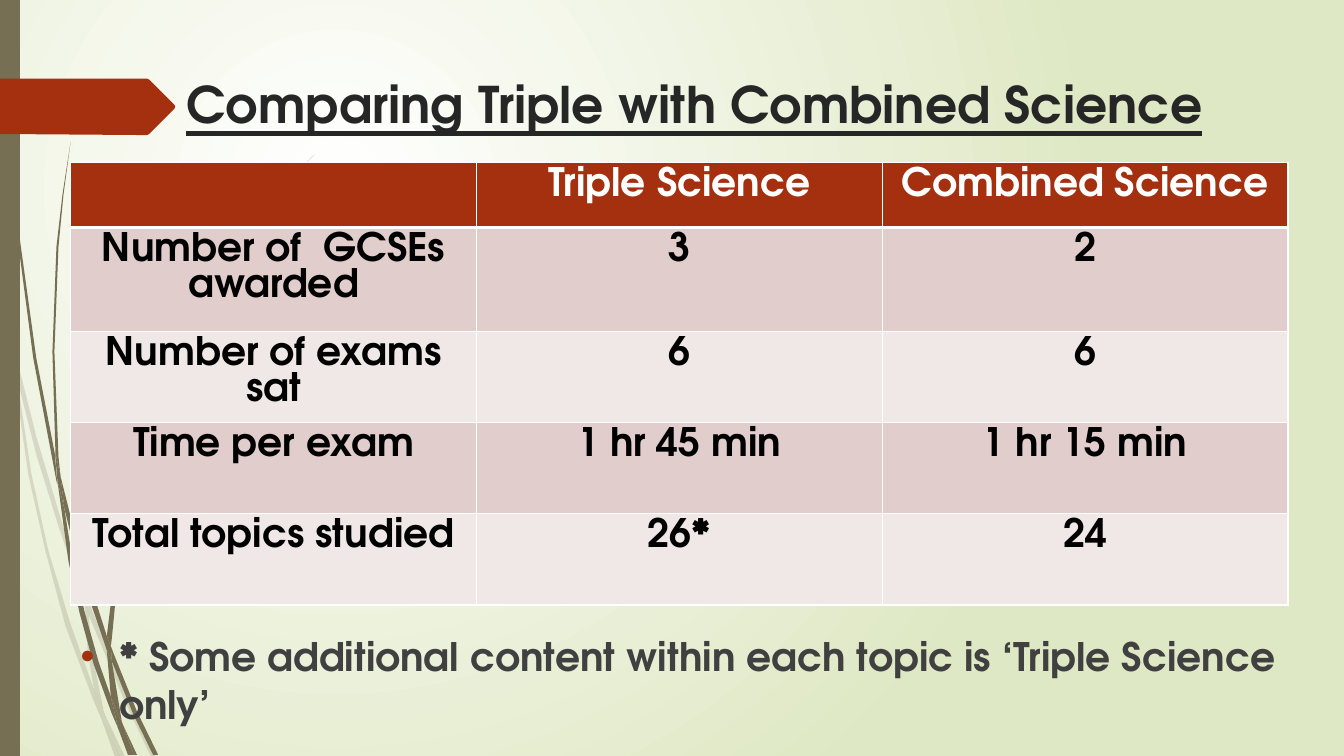
from dataclasses import dataclass

from lxml.etree import SubElement
from pptx import Presentation
from pptx.dml.color import RGBColor
from pptx.enum.shapes import MSO_SHAPE
from pptx.enum.text import MSO_ANCHOR, PP_ALIGN
from pptx.oxml.ns import qn
from pptx.util import Cm, Pt


@dataclass(frozen=True)
class Theme:
    font: str = "TeX Gyre Adventor"
    title_size: int = 36
    body_size: int = 28
    white: str = "FFFFFF"
    black: str = "000000"
    backdrop: str = "DFE8C4"
    olive: str = "766F54"
    rust: str = "A53010"
    band_dark: str = "E1CDCC"
    band_light: str = "F0E8E7"
    title: str = "262626"
    note: str = "404040"


# Outlines are drawn on a fine grid of this step
GRID = Cm(0.0254)

# Pale grass: each piece is a closed outline of x, y points
PALE_GRASS = [
    [(11, 350), (9, 322), (0, 282), (0, 299), (10, 344)],
    [(58, 522), (84, 599), (85, 586), (62, 520), (36, 433), (14, 345), (17, 376), (36, 451)],
    [(92, 607), (88, 596), (88, 610), (123, 694), (150, 751), (155, 751), (127, 692)],
    [(119, 751), (124, 751), (105, 711)],
    [(93, 683), (70, 619), (48, 546), (31, 469), (17, 376), (11, 350), (28, 470),
     (45, 546), (65, 621), (92, 693), (101, 714), (99, 707)],
    [(84, 599), (87, 646), (93, 683), (96, 692), (105, 711), (103, 706), (91, 646),
     (88, 610), (88, 608)],
    [(88, 584), (95, 522), (110, 462), (132, 405), (160, 349), (193, 296), (229, 245),
     (268, 198), (290, 175), (312, 154), (312, 153), (289, 175), (268, 197), (228, 244),
     (191, 295), (158, 348), (130, 403), (107, 461), (92, 521), (85, 584), (85, 586), (88, 596)],
    [(101, 714), (114, 751), (119, 751)],
    [(88, 608), (88, 610), (88, 596), (85, 586), (84, 599)],
    [(96, 692), (93, 683), (99, 707), (101, 714), (119, 751), (105, 711)],
]

# Dark grass
DARK_GRASS = [
    [(7, 110), (17, 233), (33, 355), (56, 477), (57, 481), (55, 457), (55, 453), (36, 355),
     (19, 232), (8, 109), (5, 48), (4, 0), (3, 0), (4, 48)],
    [(88, 592), (106, 645), (106, 633), (106, 631), (93, 590), (75, 532), (60, 472),
     (64, 505), (75, 549)],
    [(113, 649), (110, 641), (111, 656), (132, 708), (152, 749), (157, 749), (136, 706)],
    [(110, 691), (98, 657), (84, 607), (72, 556), (64, 505), (57, 477), (68, 557),
     (79, 608), (93, 659), (111, 708), (117, 722), (116, 717)],
    [(60, 472), (58, 453), (54, 349), (58, 245), (63, 193), (70, 141), (62, 193), (56, 245),
     (52, 349), (55, 449), (60, 472)],
    [(133, 749), (136, 749), (122, 719)],
    [(57, 477), (64, 505), (60, 472), (55, 449), (55, 453)],
    [(111, 633), (115, 592), (125, 552), (140, 513), (158, 476), (180, 440), (205, 406),
     (231, 374), (245, 359), (261, 344), (260, 344), (245, 358), (231, 373), (204, 405),
     (179, 439), (156, 474), (137, 512), (122, 551), (111, 590), (106, 631), (110, 641)],
    [(117, 722), (127, 749), (131, 749)],
    [(106, 645), (110, 691), (116, 706), (122, 719), (121, 716), (111, 656), (109, 651)],
    [(106, 645), (109, 651), (111, 656), (110, 641), (106, 631)],
    [(116, 706), (110, 691), (116, 717), (117, 722), (130, 749), (133, 749), (122, 719)],
]

TITLE_ARROW = [(173, 108), (148, 133), (146, 134), (136, 134), (0, 133), (0, 78),
               (146, 78), (148, 79), (173, 104), (174, 106)]

COMPARISON = [
    ["", "Triple Science", "Combined Science"],
    ["Number of  GCSEs awarded", "3", "2"],
    ["Number of exams sat", "6", "6"],
    ["Time per exam", "1 hr 45 min", "1 hr 15 min"],
    ["Total topics studied", "26*", "24"],
]
ROW_HEIGHTS = [1.63, 2.62, 2.3, 2.3, 2.3]


class SlideBuilder:
    def __init__(self, slide, theme):
        self.s = slide
        self.theme = theme

    def backdrop(self):
        fill = self.s.background.fill
        fill.gradient()
        for stop, color in zip(fill.gradient_stops, (self.theme.white, self.theme.backdrop)):
            stop.color.rgb = RGBColor.from_string(color)
        grad = self.s._element.find(".//" + qn("a:gradFill"))
        grad.remove(grad.find(qn("a:lin")))
        circle = SubElement(grad, qn("a:path"), path="circle")
        SubElement(circle, qn("a:fillToRect"), l="50000", t="50000", r="100000", b="100000")

    def paint(self, sp, color, alpha=None):
        sp.shadow.inherit = False
        sp.fill.solid()
        sp.fill.fore_color.rgb = RGBColor.from_string(color)
        sp.line.fill.background()
        if alpha:
            rgb = sp._element.spPr.find(".//" + qn("a:srgbClr"))
            SubElement(rgb, qn("a:alpha"), val=str(alpha * 1000))

    def outline(self, shapes, points, color, alpha=None):
        builder = shapes.build_freeform(*points[0], scale=GRID)
        builder.add_line_segments(points[1:], close=True)
        self.paint(builder.convert_to_shape(), color, alpha)

    def grass(self, pieces, alpha=None):
        group = self.s.shapes.add_group_shape()
        for points in pieces:
            self.outline(group.shapes, points, self.theme.olive, alpha)

    def bar(self, x, y, w, h, color):
        sp = self.s.shapes.add_shape(MSO_SHAPE.RECTANGLE, Cm(x), Cm(y), Cm(w), Cm(h))
        self.paint(sp, color)

    def format_runs(self, p, size, color, underline=None):
        for r in p.runs:
            r.font.name = self.theme.font
            r.font.size = Pt(size)
            r.font.bold = True
            r.font.underline = underline
            r.font.color.rgb = RGBColor.from_string(color)

    def text(self, x, y, w, h, words, size, color, underline=None):
        tf = self.s.shapes.add_textbox(Cm(x), Cm(y), Cm(w), Cm(h)).text_frame
        tf.word_wrap = True
        tf.text = words
        p = tf.paragraphs[0]
        self.format_runs(p, size, color, underline)
        return p

    def bullet(self, p, color, indent):
        p.space_before = Pt(10)
        pPr = p._p.get_or_add_pPr()
        pPr.set("marL", str(Cm(indent)))
        pPr.set("indent", str(-Cm(indent)))
        SubElement(SubElement(pPr, qn("a:buClr")), qn("a:srgbClr"), val=color)
        SubElement(pPr, qn("a:buFont"), typeface="Arial")
        SubElement(pPr, qn("a:buChar"), char="•")

    def borders(self, cell, top, bottom):
        tcPr = cell._tc.get_or_add_tcPr()
        for side, width in (("L", 1), ("R", 1), ("T", top), ("B", bottom)):
            ln = SubElement(tcPr, qn(f"a:ln{side}"), w=str(Pt(width)))
            SubElement(SubElement(ln, qn("a:solidFill")), qn("a:srgbClr"), val=self.theme.white)

    def table(self, x, y, w, rows, heights):
        t = self.theme
        columns = len(rows[0])
        table = self.s.shapes.add_table(
            len(rows), columns, Cm(x), Cm(y), Cm(w), Cm(sum(heights))).table
        for column in table.columns:
            column.width = Cm(w / columns)
        for i, (row, height) in enumerate(zip(rows, heights)):
            table.rows[i].height = Cm(height)
            fill = t.rust if i == 0 else t.band_dark if i % 2 else t.band_light
            for j, words in enumerate(row):
                cell = table.cell(i, j)
                self.borders(cell, 3 if i == 1 else 1, 3 if i == 0 else 1)
                cell.fill.solid()
                cell.fill.fore_color.rgb = RGBColor.from_string(fill)
                cell.margin_left = cell.margin_right = Cm(0.33)
                cell.margin_top = cell.margin_bottom = Cm(0.13)
                cell.vertical_anchor = MSO_ANCHOR.TOP
                if words:
                    cell.text_frame.text = words
                    p = cell.text_frame.paragraphs[0]
                    p.alignment = PP_ALIGN.CENTER
                    self.format_runs(p, t.body_size, t.black if i else t.white)


def main():
    prs = Presentation()
    prs.slide_width, prs.slide_height = Cm(33.87), Cm(19.05)
    theme = Theme()
    slide = SlideBuilder(prs.slides.add_slide(prs.slide_layouts[6]), theme)

    # Background, grass and side bar
    slide.backdrop()
    slide.grass(PALE_GRASS, alpha=20)
    slide.grass(DARK_GRASS)
    slide.bar(0, 0, 0.5, 19.05, theme.olive)
    slide.outline(slide.s.shapes, TITLE_ARROW, theme.rust)

    # Comparison table
    slide.table(1.78, 4.1, 30.68, COMPARISON, ROW_HEIGHTS)

    # Title
    slide.text(4.45, 1.72, 32, 3.18, "Comparing Triple with Combined Science",
               theme.title_size, theme.title, underline=True)

    # Footnote
    note = slide.text(1.78, 15.82, 30.68, 2.62,
                      "* Some additional content within each topic is ‘Triple Science only’",
                      theme.body_size, theme.note)
    slide.bullet(note, theme.rust, 0.97)

    prs.save("out.pptx")


if __name__ == "__main__":
    main()
